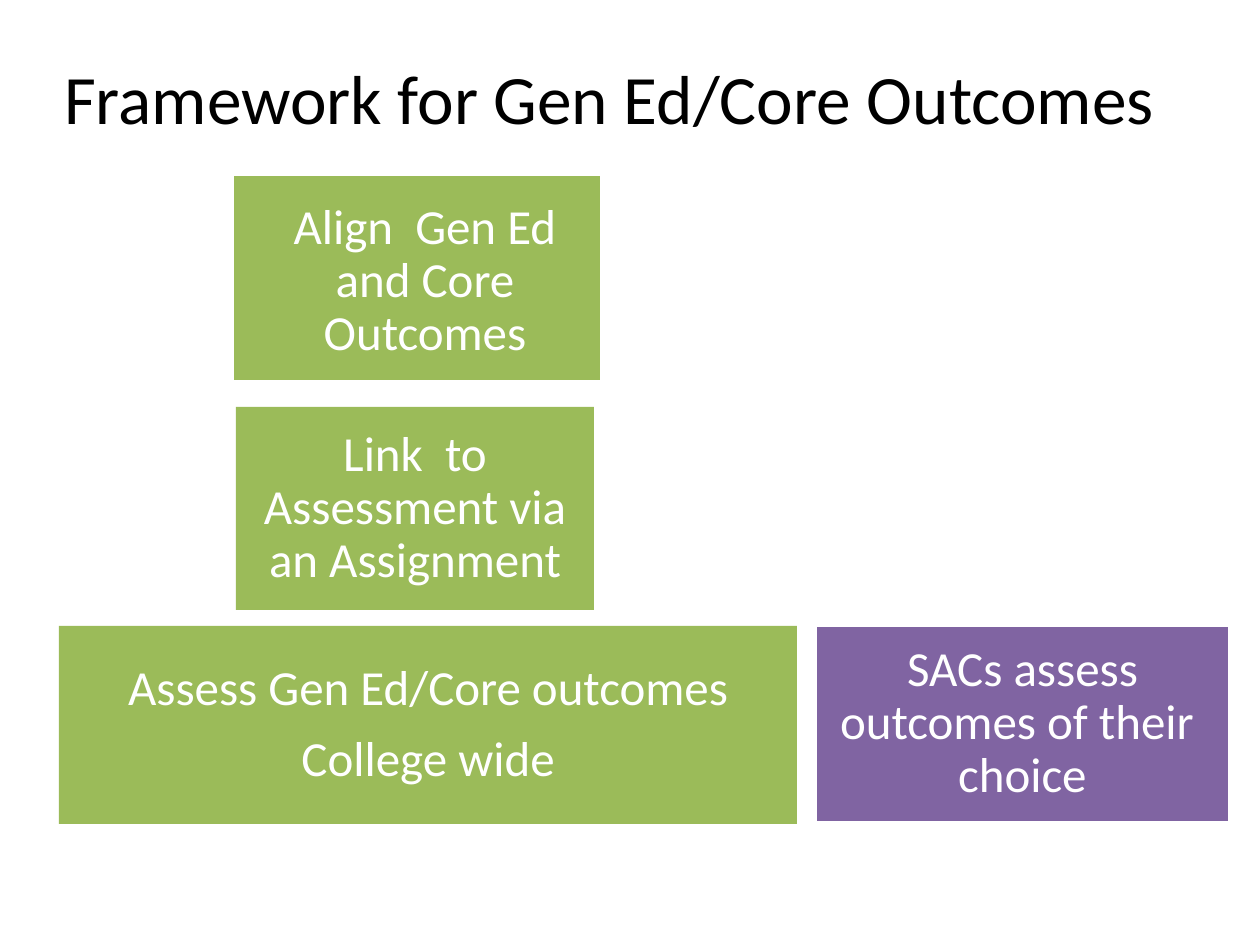
from pptx import Presentation, util as u
from pptx.dml.color import RGBColor
from pptx.enum import shapes, text

PX = 914400 / 126
GREEN = RGBColor(0x9B, 0xBB, 0x59)
PURPLE = RGBColor(0x80, 0x64, 0xA2)
WHITE = RGBColor(0xFF, 0xFF, 0xFF)
BLACK = RGBColor(0, 0, 0)


def px(*lengths):
    return [u.Emu(round(length * PX)) for length in lengths]


def write(box, *lines, size=28, color=WHITE, inset=18, spacing=0.9, after=10):
    """Fill a box with centred lines, one paragraph each."""
    frame = box.text_frame
    frame.word_wrap = True
    frame.vertical_anchor = text.MSO_ANCHOR.MIDDLE
    for side in ("left", "right", "top", "bottom"):
        setattr(frame, f"margin_{side}", px(inset)[0])
    for i, line in enumerate(lines):
        para = frame.add_paragraph() if i else frame.paragraphs[0]
        para.alignment = text.PP_ALIGN.CENTER
        para.line_spacing = spacing
        para.space_after = u.Pt(after)
        span = para.add_run()
        span.text = line
        span.font.name = "Calibri"
        span.font.size = u.Pt(size)
        span.font.color.rgb = color


deck = Presentation()
deck.slide_width, deck.slide_height = px(1260, 945)
page = deck.slides.add_slide(deck.slide_layouts[6])

title = page.shapes.add_textbox(*px(38, 38, 1158, 117))
write(title, "Framework for Gen Ed/Core Outcomes ",
      size=39.6, color=BLACK, inset=6, spacing=1.0, after=0)

# Place, fill, white outline, lines of text
blocks = [
    ((232, 174, 370, 208), GREEN, True, []),
    ((236, 407, 358, 203), GREEN, False, ["Link  to Assessment via an Assignment"]),
    ((59, 626, 738, 198), GREEN, False,
     ["Assess Gen Ed/Core outcomes", " College wide "]),
    ((815, 625, 415, 198), PURPLE, True, ["SACs assess outcomes of their  choice"]),
]
for place, fill, outlined, lines in blocks:
    box = page.shapes.add_shape(shapes.MSO_SHAPE.RECTANGLE, *px(*place))
    box.shadow.inherit = False
    box.fill.solid()
    box.fill.fore_color.rgb = fill
    if outlined:
        box.line.color.rgb = WHITE
        box.line.width = u.Pt(2)
    else:
        box.line.fill.background()
    write(box, *lines)

# The first block's label sits slightly right of and below its centre
align_label = page.shapes.add_textbox(*px(236, 174, 378, 215))
write(align_label, "Align  Gen Ed and Core Outcomes")

deck.save("out.pptx")
